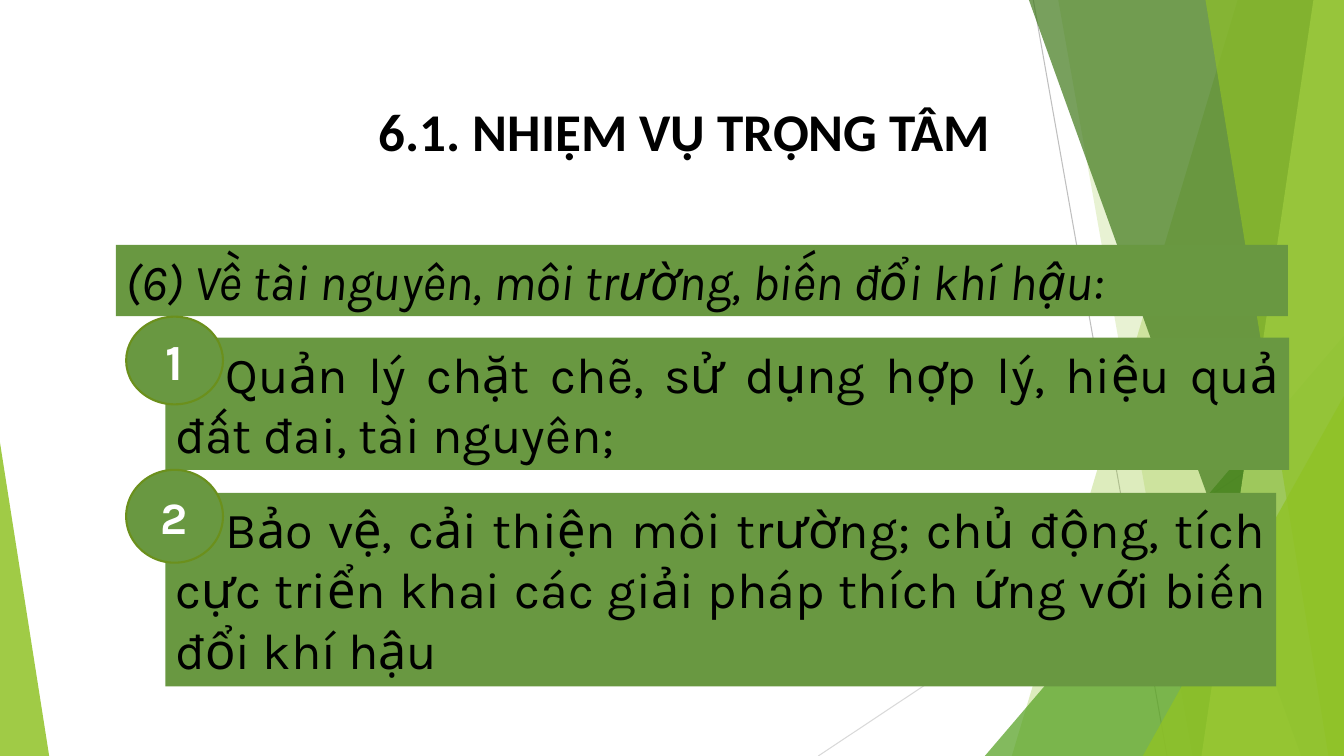
from lxml import etree
from pptx import Presentation
from pptx import util as u
from pptx.dml.color import RGBColor
from pptx.enum import shapes, text
from pptx.oxml.ns import qn

BLACK = RGBColor(0, 0, 0)
WHITE = RGBColor(255, 255, 255)
BAR = RGBColor(0x69, 0x98, 0x41)
BADGE_RIM = RGBColor(0x6B, 0x90, 0x1C)
LIME = RGBColor(0x90, 0xC2, 0x26)
GRASS = RGBColor(0x54, 0xA0, 0x21)
FOREST = RGBColor(0x3F, 0x78, 0x19)
PALE = RGBColor(0xC0, 0xE4, 0x74)
GREY = RGBColor(0xBF, 0xBF, 0xBF)
LIGHT_GREY = RGBColor(0xD9, 0xD9, 0xD9)

# Content; boxes are left, top, width, height in cm
WIDTH, HEIGHT = 33.87, 19.05
HEADING = "6.1. NHIỆM VỤ TRỌNG TÂM"
HEADING_BOX = (2.06, 2.41, 30.4, 1.73)
TOPIC = "(6) Về tài nguyên, môi trường, biến đổi khí hậu:"
TOPIC_BOX = (2.92, 6.17, 29.54, 1.8)
TASKS = [  # wording, bar box, badge box, badge text size
    ("Quản lý chặt chẽ, sử dụng hợp lý, hiệu quả đất đai, tài nguyên;",
     (4.17, 8.51, 28.32, 3.33), (3.18, 7.98, 2.44, 2.21), 36),
    ("Bảo vệ, cải thiện môi trường; chủ động, tích cực triển khai các giải pháp "
     "thích ứng với biến đổi khí hậu",
     (4.17, 12.42, 27.99, 4.88), (3.18, 11.84, 2.44, 2.34), 32),
]

# Decoration, back to front
RAYS = [((26.04, 0), (29.41, HEIGHT), GREY),
        ((WIDTH, 10.24), (20.62, HEIGHT), LIGHT_GREY)]
DECOR = [  # band: top x, bottom x; triangle: box, apex; then colour, opacity %
    ("band", (31.19, 25.5), LIME, 30),
    ("band", (26.67, 30.05), LIME, 20),
    ("triangle", ((24.82, 8.46, 9.05, 10.59), 1), GRASS, 72),
    ("band", (25.93, 32.79), FOREST, 70),
    ("band", (33.1, 30.28), PALE, 70),
    ("band", (30.38, 33.48), LIME, 65),
    ("triangle", ((28.8, 9.98, 5.07, 9.07), 1), LIME, 80),
    ("triangle", ((0, 11.15, 1.24, 7.9), 0), LIME, 85),
]

deck = Presentation()
deck.slide_width, deck.slide_height = u.Cm(WIDTH), u.Cm(HEIGHT)
slide = deck.slides.add_slide(deck.slide_layouts[5])


def cm(lengths):
    return [u.Cm(length) for length in lengths]


def paint(part, colour, opacity=100):
    part.shadow.inherit = False
    part.fill.solid()
    part.fill.fore_color.rgb = colour
    part.line.fill.background()
    if opacity < 100:
        tint = part.fill._xPr.find(qn("a:solidFill"))[0]
        etree.SubElement(tint, qn("a:alpha"), val=str(opacity * 1000))


def add_preset(preset, box, colour, opacity=100):
    part = slide.shapes.add_shape(preset, *cm(box))
    paint(part, colour, opacity)
    return part


def add_band(top_x, bottom_x, colour, opacity):
    outline = slide.shapes.build_freeform(u.Cm(top_x), 0)
    corners = [(WIDTH, 0), (WIDTH, HEIGHT), (bottom_x, HEIGHT)]
    outline.add_line_segments([cm(corner) for corner in corners])
    paint(outline.convert_to_shape(), colour, opacity)


def write(part, wording, size, font, colour, align, anchor, bold=False, italic=False):
    frame = part.text_frame
    frame.word_wrap = True
    frame.auto_size = text.MSO_AUTO_SIZE.NONE
    frame.vertical_anchor = anchor
    paragraph = frame.paragraphs[0]
    paragraph.alignment = align
    run = paragraph.add_run()
    run.text = wording
    run.font.size, run.font.name = u.Pt(size), font
    run.font.bold, run.font.italic = bold, italic
    run.font.color.rgb = colour
    return paragraph


def add_bar(wording, box, italic=False):
    bar = add_preset(shapes.MSO_SHAPE.RECTANGLE, box, BAR)
    return write(bar, wording, 36, "Karla", BLACK, text.PP_ALIGN.JUSTIFY,
                 text.MSO_ANCHOR.TOP, italic=italic)


# Background rays, bands and triangles
for start, end, colour in RAYS:
    ray = slide.shapes.add_connector(shapes.MSO_CONNECTOR.STRAIGHT, *cm(start + end))
    ray.line.color.rgb = colour
    ray.line.width = u.Pt(0.75)
    etree.SubElement(ray._element.spPr, qn("a:effectLst"))

for kind, geometry, colour, opacity in DECOR:
    if kind == "band":
        add_band(*geometry, colour, opacity)
    else:
        box, apex = geometry
        triangle = add_preset(shapes.MSO_SHAPE.ISOSCELES_TRIANGLE, box, colour, opacity)
        triangle.adjustments[0] = apex

# Title
heading = slide.shapes.title
heading.left, heading.top, heading.width, heading.height = cm(HEADING_BOX)
write(heading, HEADING, 37.9, "Calibri", BLACK, text.PP_ALIGN.CENTER,
      text.MSO_ANCHOR.MIDDLE, bold=True)

# Topic and task bars
add_bar(TOPIC, TOPIC_BOX, italic=True)
for wording, bar_box, _, _ in TASKS:
    task = add_bar(wording, bar_box)
    task._p.get_or_add_pPr().set("indent", str(u.Cm(1.27)))

# Numbered badges
for number, (_, _, badge_box, size) in enumerate(TASKS, start=1):
    badge = add_preset(shapes.MSO_SHAPE.OVAL, badge_box, BAR)
    badge.line.color.rgb = BADGE_RIM
    badge.line.width = u.Pt(1.5)
    write(badge, str(number), size, "Karla", WHITE, text.PP_ALIGN.CENTER,
          text.MSO_ANCHOR.MIDDLE, bold=True)

deck.save("out.pptx")
